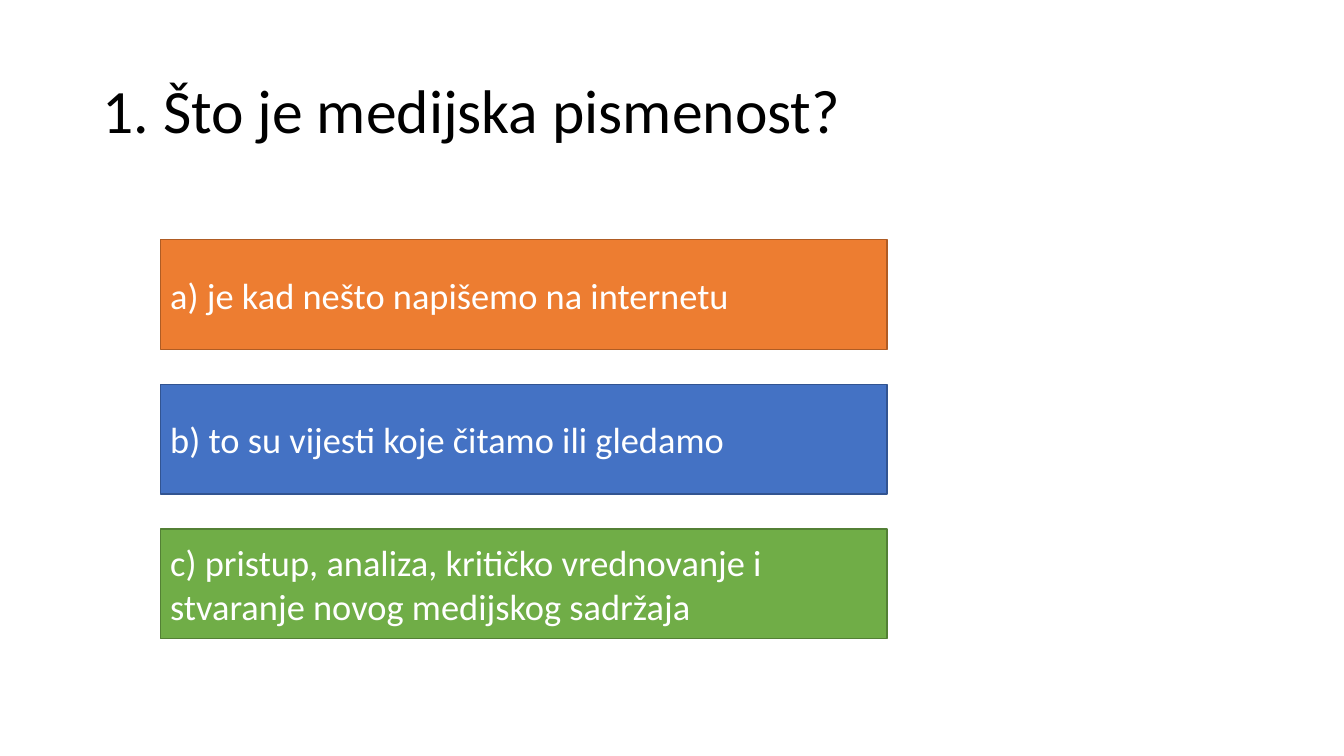
from pptx import Presentation
from pptx.dml.color import RGBColor
from pptx.enum.shapes import MSO_SHAPE
from pptx.enum.text import MSO_ANCHOR, PP_ALIGN
from pptx.util import Pt

COLORS = {
    "black": "000000", "white": "FFFFFF",
    "orange": "ED7D31", "orange_line": "AF5C24",
    "blue": "4472C4", "blue_line": "325491",
    "green": "70AD47", "green_line": "538035",
}
ANSWERS = [
    ("a) je kad nešto napišemo na internetu", "orange"),
    ("b) to su vijesti koje čitamo ili gledamo", "blue"),
    ("c) pristup, analiza, kritičko vrednovanje i stvaranje novog medijskog sadržaja", "green"),
]
LEFT, TOP, WIDTH, HEIGHT, PITCH = 114.5, 171.2, 519.1, 78.5, 103.3


def rgb(name):
    return RGBColor.from_string(COLORS[name])


def write(sp, text, size, color):
    """Fill a shape with one left-aligned, vertically centred paragraph."""
    tf = sp.text_frame
    tf.word_wrap = True
    tf.vertical_anchor = MSO_ANCHOR.MIDDLE
    p = tf.paragraphs[0]
    p.alignment = PP_ALIGN.LEFT
    r = p.add_run()
    r.text = text
    for name, value in {"name": "Calibri", "size": Pt(size)}.items():
        setattr(r.font, name, value)
    r.font.color.rgb = rgb(color)
    return p


prs = Presentation()
prs.slide_width, prs.slide_height = Pt(960), Pt(540)
s = prs.slides.add_slide(prs.slide_layouts[5])

title = s.shapes.title
box = {"left": 66, "top": 28.8, "width": 828, "height": 104.4}
for name, value in box.items():
    setattr(title, name, Pt(value))
p = write(title, "1. Što je medijska pismenost?", 44, "black")
p.line_spacing = 0.9

for i, (text, color) in enumerate(ANSWERS):
    sp = s.shapes.add_shape(MSO_SHAPE.RECTANGLE, Pt(LEFT), Pt(TOP + i * PITCH), Pt(WIDTH), Pt(HEIGHT))
    sp.shadow.inherit = False
    sp.fill.solid()
    sp.fill.fore_color.rgb = rgb(color)
    sp.line.color.rgb = rgb(f"{color}_line")
    sp.line.width = Pt(1)
    write(sp, text, 26, "white")

prs.save("out.pptx")
